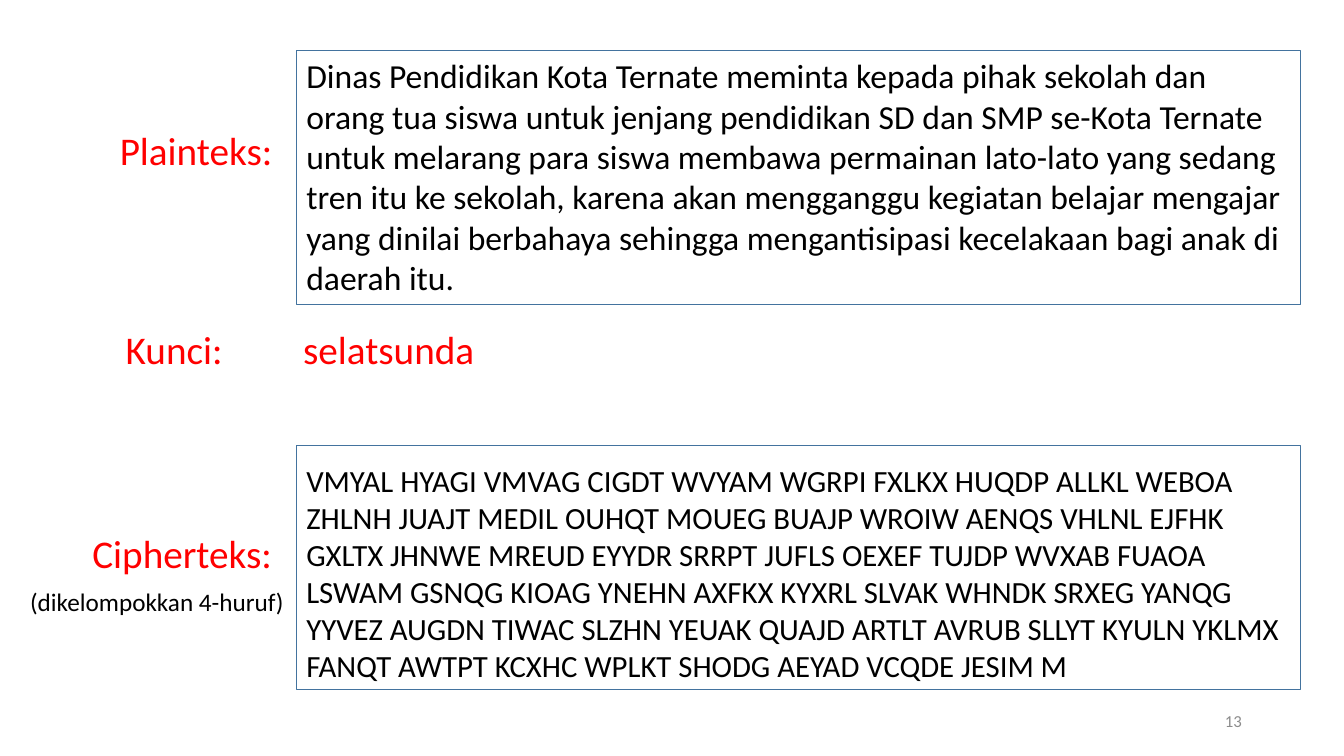
from lxml import etree
from pptx import Presentation
from pptx import util as u
from pptx.dml.color import RGBColor
from pptx.enum import shapes, text
from pptx.oxml.ns import qn

PLAINTEXT = (
    "Dinas Pendidikan Kota Ternate meminta kepada pihak sekolah dan orang tua siswa "
    "untuk jenjang pendidikan SD dan SMP se-Kota Ternate untuk melarang para siswa "
    "membawa permainan lato-lato yang sedang tren itu ke sekolah, karena akan "
    "mengganggu kegiatan belajar mengajar yang dinilai berbahaya sehingga "
    "mengantisipasi kecelakaan bagi anak di daerah itu."
)
CIPHERTEXT = (
    "VMYAL HYAGI VMVAG CIGDT WVYAM WGRPI FXLKX HUQDP ALLKL WEBOA "
    "ZHLNH JUAJT MEDIL OUHQT MOUEG BUAJP WROIW AENQS VHLNL EJFHK "
    "GXLTX JHNWE MREUD EYYDR SRRPT JUFLS OEXEF TUJDP WVXAB FUAOA "
    "LSWAM GSNQG KIOAG YNEHN AXFKX KYXRL SLVAK WHNDK SRXEG YANQG "
    "YYVEZ AUGDN TIWAC SLZHN YEUAK QUAJD ARTLT AVRUB SLLYT KYULN YKLMX "
    "FANQT AWTPT KCXHC WPLKT SHODG AEYAD VCQDE JESIM M"
)
RED, BLACK, GREY, BLUE = "FF0000", "000000", "8C8C8C", "43739E"
PANEL_LEFT, PANEL_WIDTH = 7.47, 25.3


def color(hex_string):
    return RGBColor.from_string(hex_string)


def add_text(slide, box, words, size, hex_string, wrap=False, tab=None):
    """Place one paragraph in a box given in centimetres."""
    shape = slide.shapes.add_textbox(*map(u.Cm, box))
    frame = shape.text_frame
    frame.word_wrap = wrap
    paragraph = frame.paragraphs[0]
    paragraph.text = words
    if tab:
        tabs = etree.SubElement(paragraph._p.get_or_add_pPr(), qn("a:tabLst"))
        etree.SubElement(tabs, qn("a:tab"), pos=str(u.Cm(tab)), algn="l")
    paragraph.font.name = "Calibri"
    paragraph.font.size = u.Pt(size)
    paragraph.font.color.rgb = color(hex_string)
    return shape


def add_panel(slide, top, height, words, size, inset=0):
    """Draw a framed text panel; inset lowers the text inside the frame."""
    add_text(slide, (PANEL_LEFT, top + inset, PANEL_WIDTH, height - inset),
             words, size, BLACK, wrap=True)
    frame = slide.shapes.add_shape(
        shapes.MSO_SHAPE.RECTANGLE,
        *map(u.Cm, (PANEL_LEFT, top, PANEL_WIDTH, height)))
    frame.shadow.inherit = False
    frame.fill.background()
    frame.line.color.rgb = color(BLUE)
    frame.line.width = u.Pt(1)


def add_plaintext(slide, top):
    add_panel(slide, top, 6.4, PLAINTEXT, 24)
    add_text(slide, (2.77, top + 1.8, 4.39, 1.45), "Plainteks:", 28, RED)


def add_key(slide, top):
    add_text(slide, (2.92, top, 9.6, 1.45), "Kunci:\tselatsunda", 28, RED,
             wrap=True, tab=4.47)


def add_ciphertext(slide, top):
    add_panel(slide, top, 6.15, CIPHERTEXT, 22, inset=0.28)
    add_text(slide, (2.08, top + 1.98, 5.08, 1.45), "Cipherteks:", 28, RED)
    add_text(slide, (0.51, top + 3.43, 6.98, 1.02), "(dikelompokkan 4-huruf)", 18, BLACK)


def add_slide_number(slide, top):
    shape = add_text(slide, (23.93, top, 7.62, 1.02), "13", 12, GREY, wrap=True)
    shape.text_frame.vertical_anchor = text.MSO_ANCHOR.MIDDLE
    shape.text_frame.paragraphs[0].alignment = text.PP_ALIGN.RIGHT


def main():
    presentation = Presentation()
    presentation.slide_width = u.Cm(33.87)
    presentation.slide_height = u.Cm(19.05)
    slide = presentation.slides.add_slide(presentation.slide_layouts[6])

    # Message, key, encrypted message, then the footer
    add_plaintext(slide, 1.27)
    add_key(slide, 8.08)
    add_ciphertext(slide, 11.23)
    add_slide_number(slide, 17.65)

    presentation.save("out.pptx")


if __name__ == "__main__":
    main()
